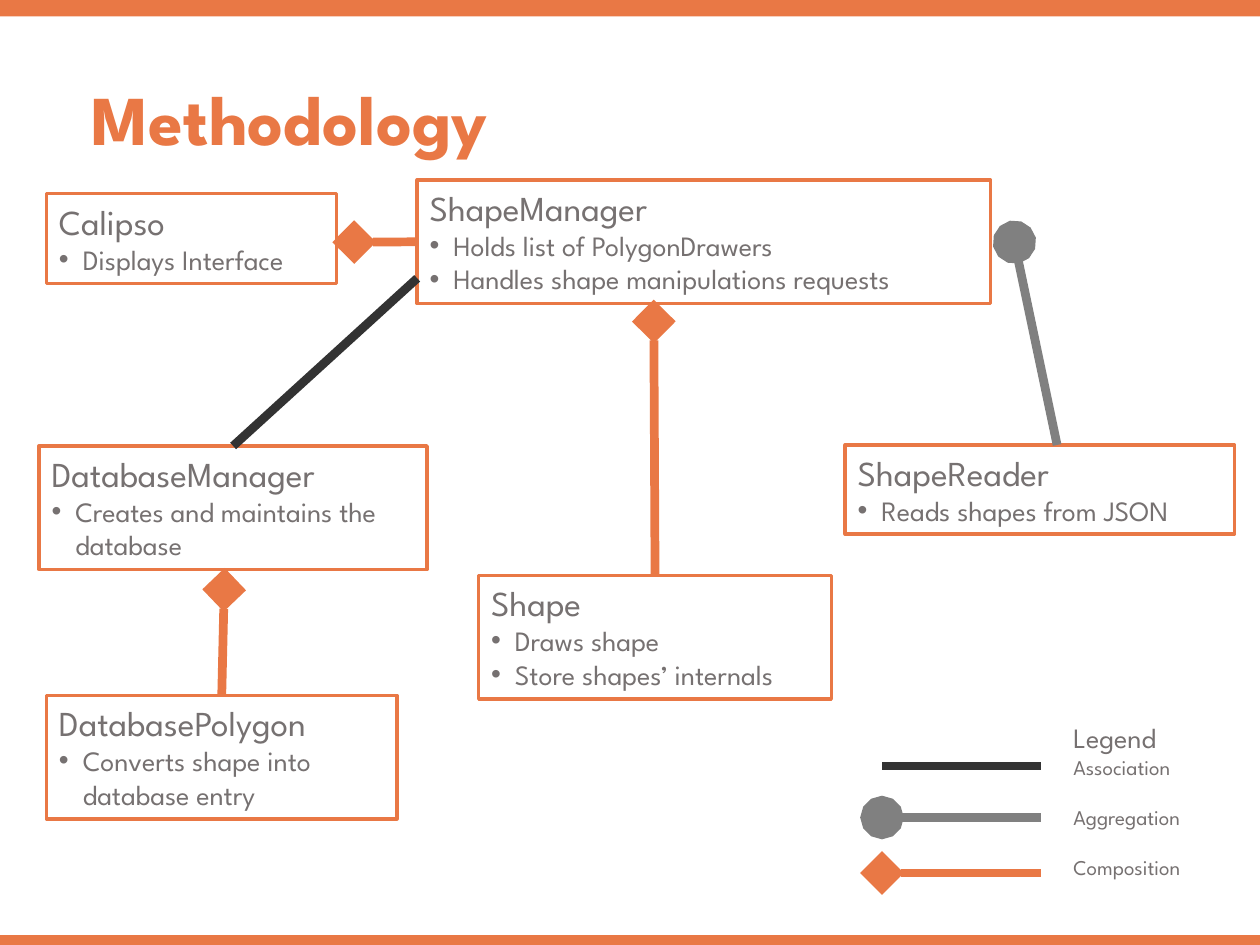
"""Build a class-relationship slide with boxes, typed links and a legend."""
from typing import NamedTuple, Optional

from lxml.etree import SubElement
from pptx import Presentation
from pptx.dml.color import RGBColor
from pptx.enum.shapes import MSO_AUTO_SHAPE_TYPE as ShapeType, MSO_CONNECTOR as ConnectorType
from pptx.enum.text import MSO_ANCHOR as Anchor, PP_ALIGN as Align
from pptx.oxml.ns import qn
from pptx.util import Cm, Pt

ORANGE, TEXT_GRAY = "E97845", "767171"
FONT = "League Spartan"
WIDTH, HEIGHT = 25.4, 19.05
INDENT = Cm(0.48)
TOP, LEFT = 0, 1


class ClassBox(NamedTuple):
    name: str
    duties: list[str]
    left: float
    top: float
    width: float
    height: float
    border: float = 2


class Relation(NamedTuple):
    color: str
    marker: Optional[str] = None


class Link(NamedTuple):
    relation: str
    source: str
    end: tuple[float, float]
    side: int = TOP
    start: Optional[tuple[float, float]] = None


RELATIONS = {
    "Association": Relation("333333"),
    "Aggregation": Relation("808080", "oval"),
    "Composition": Relation(ORANGE, "diamond"),
}
BOXES = [
    ClassBox("Shape", ["Draws shape", "Store shapes’ internals"], 9.65, 11.6, 7.11, 2.49),
    ClassBox("ShapeReader", ["Reads shapes from JSON"], 17.04, 8.97, 7.85, 1.8),
    ClassBox("DatabasePolygon", ["Converts shape into database entry"], 0.94, 14.02, 7.06, 2.49),
    ClassBox("Calipso", ["Displays Interface"], 0.94, 3.91, 5.84, 1.8, 1.75),
    ClassBox("ShapeManager", ["Holds list of PolygonDrawers",
                              "Handles shape manipulations requests"], 8.41, 3.63, 11.56, 2.49),
    ClassBox("DatabaseManager", ["Creates and maintains the database"], 0.79, 8.99, 7.82, 2.49),
]
LINKS = [
    Link("Composition", "Shape", (13.18, 6.48)),
    Link("Composition", "ShapeManager", (7.14, 4.88), LEFT),
    Link("Aggregation", "ShapeReader", (20.45, 4.88), start=(21.31, 8.97)),
    Link("Association", "DatabaseManager", (8.41, 5.61)),
    Link("Composition", "DatabasePolygon", (4.52, 11.89)),
]
LEGEND_LEFT, LEGEND_RIGHT = 17.78, 20.98
LEGEND_ROWS = [15.44, 16.48, 17.6]


def rgb(color: str) -> RGBColor:
    """Turn a hex string into a colour."""
    return RGBColor.from_string(color)


def set_frame(shape) -> None:
    """Make the text wrap and start at the top."""
    for name, value in {"word_wrap": True, "vertical_anchor": Anchor.TOP}.items():
        setattr(shape.text_frame, name, value)


def add_text(shape, text: str, size: float, color: str = TEXT_GRAY, bold: bool = False, **spacing):
    """Append a paragraph, reusing the first one while it is empty."""
    frame = shape.text_frame
    paragraph = frame.add_paragraph() if frame.text else frame.paragraphs[0]
    for name, value in {"alignment": Align.LEFT, **spacing}.items():
        setattr(paragraph, name, value)
    run = paragraph.add_run()
    run.text = text
    for name, value in {"name": FONT, "size": Pt(size), "bold": bold}.items():
        setattr(run.font, name, value)
    run.font.color.rgb = rgb(color)
    return paragraph


def add_bullet(shape, text: str) -> None:
    """Append a bulleted paragraph with a hanging indent."""
    properties = add_text(shape, text, 16)._p.get_or_add_pPr()
    properties.set("marL", str(INDENT))
    properties.set("indent", str(-INDENT))
    SubElement(properties, qn("a:buFont"), typeface="Arial")
    SubElement(properties, qn("a:buChar"), char="•")


def add_bar(slide, top: float, height: float) -> None:
    """Draw a full-width band."""
    bar = slide.shapes.add_shape(ShapeType.RECTANGLE, Cm(0), Cm(top), Cm(WIDTH), Cm(height))
    bar.shadow.inherit = False
    bar.fill.solid()
    bar.fill.fore_color.rgb = rgb(ORANGE)
    bar.line.fill.background()


def add_class_box(slide, box: ClassBox):
    """Draw an outlined box with a class name and its duties."""
    shape = slide.shapes.add_shape(
        ShapeType.RECTANGLE, Cm(box.left), Cm(box.top), Cm(box.width), Cm(box.height))
    shape.shadow.inherit = False
    shape.fill.background()
    shape.line.color.rgb = rgb(ORANGE)
    shape.line.width = Pt(box.border)
    set_frame(shape)
    add_text(shape, box.name, 20)
    for duty in box.duties:
        add_bullet(shape, duty)
    return shape


def add_relation_line(slide, relation: Relation, start: tuple[float, float], end: tuple[float, float]):
    """Draw a thick line with the marker of its relation at the end."""
    connector = slide.shapes.add_connector(
        ConnectorType.STRAIGHT, *(Cm(value) for value in start + end))
    connector.line.color.rgb = rgb(relation.color)
    connector.line.width = Pt(5)
    if relation.marker:
        SubElement(connector.line._get_or_add_ln(), qn("a:tailEnd"),
                   type=relation.marker, w="lg", len="lg")
    SubElement(connector._element.spPr, qn("a:effectLst"))
    return connector


def add_link(slide, link: Link, shapes: dict) -> None:
    """Draw a link, joined to its source box unless it has its own start."""
    connector = add_relation_line(slide, RELATIONS[link.relation], link.start or link.end, link.end)
    if link.start is None:
        connector.begin_connect(shapes[link.source], link.side)


def add_text_box(slide, left: float, top: float, width: float, height: float):
    """Add an empty wrapping text box."""
    shape = slide.shapes.add_textbox(Cm(left), Cm(top), Cm(width), Cm(height))
    set_frame(shape)
    return shape


def add_legend(slide) -> None:
    """Draw the legend lines and their labels."""
    labels = add_text_box(slide, 21.39, 14.4, 3.18, 3.51)
    add_text(labels, "Legend", 16)
    for index, ((name, relation), y) in enumerate(zip(RELATIONS.items(), LEGEND_ROWS)):
        add_text(labels, name, 12, space_before=Pt(14.4 if index else 0))
        add_relation_line(slide, relation, (LEGEND_RIGHT, y), (LEGEND_LEFT, y))


def main() -> None:
    """Build and save the slide."""
    presentation = Presentation()
    presentation.slide_width, presentation.slide_height = Cm(WIDTH), Cm(HEIGHT)
    slide = presentation.slides.add_slide(presentation.slide_layouts[6])
    add_bar(slide, 0, 0.33)
    add_bar(slide, 18.85, 0.2)
    title = add_text_box(slide, 1.6, 1.6, 22.17, 1.96)
    add_text(title, "Methodology", 40, ORANGE, True, line_spacing=0.9)
    shapes = {box.name: add_class_box(slide, box) for box in BOXES}
    for link in LINKS:
        add_link(slide, link, shapes)
    add_legend(slide)
    presentation.save("out.pptx")


if __name__ == "__main__":
    main()
